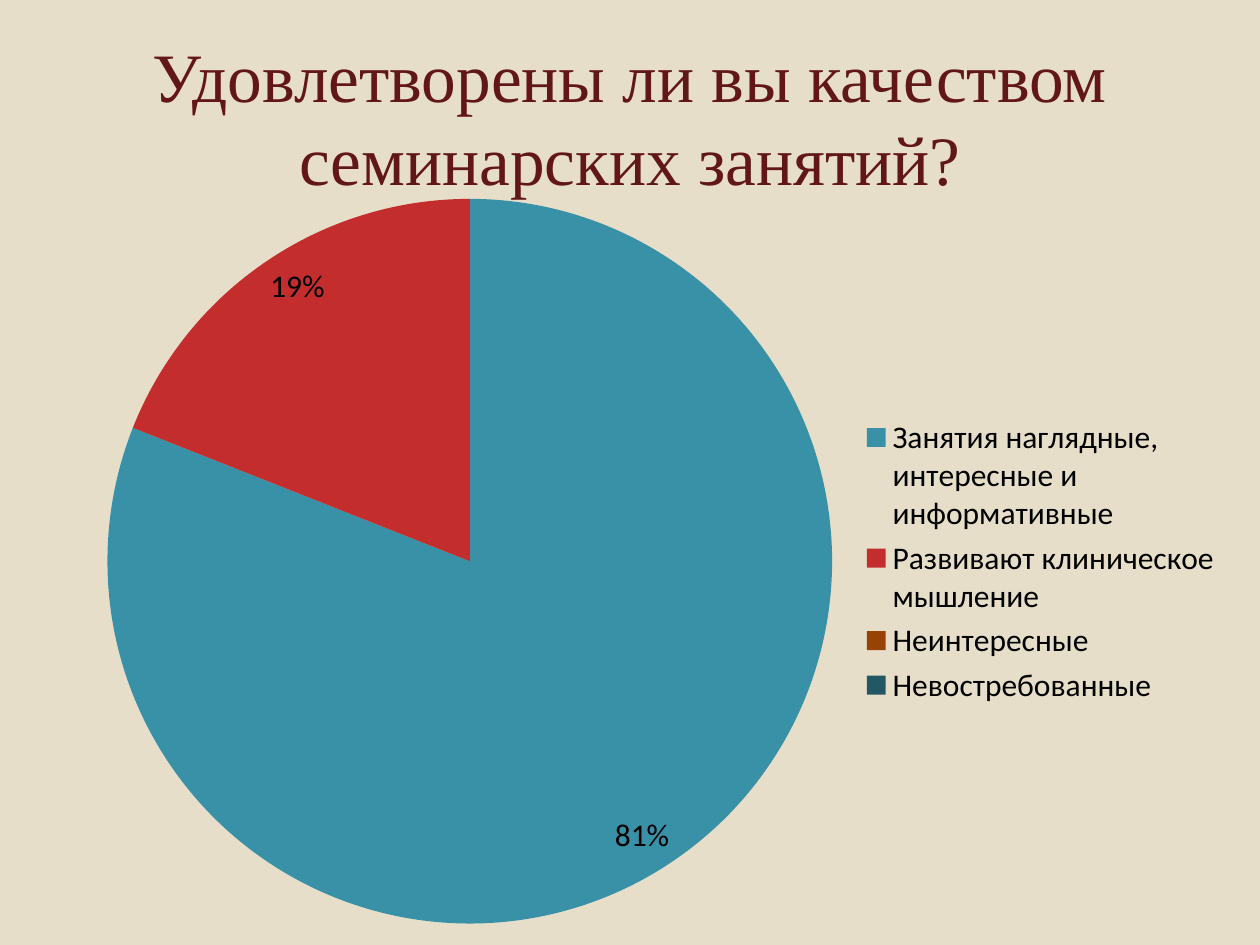
"""Builds a survey slide: a question above a pie chart of the answers."""
from lxml.etree import SubElement
from pptx import Presentation
from pptx.chart.data import CategoryChartData
from pptx.dml.color import RGBColor
from pptx.enum.chart import XL_CHART_TYPE, XL_LABEL_POSITION, XL_LEGEND_POSITION
from pptx.enum.text import MSO_ANCHOR, PP_ALIGN
from pptx.oxml.ns import qn
from pptx.util import Inches, Pt

BACKGROUND = RGBColor(0xE7, 0xDE, 0xC9)
MAROON = RGBColor(0x62, 0x17, 0x17)
BLACK = RGBColor(0, 0, 0)
TEAL = RGBColor(0x38, 0x91, 0xA7)
RED = RGBColor(0xC3, 0x2D, 0x2E)
BROWN = RGBColor(0x96, 0x43, 0x05)
DARK_TEAL = RGBColor(0x22, 0x57, 0x64)

QUESTION = "Удовлетворены ли вы качеством семинарских занятий?"
ANSWERS = [
    ("Занятия наглядные, интересные и информативные", 81, TEAL),
    ("Развивают клиническое мышление", 19, RED),
    ("Неинтересные", 0, BROWN),
    ("Невостребованные", 0, DARK_TEAL),
]
TITLE_BOX = (0.5, 0.3, 9, 1.25)
CHART_BOX = (0.67, 1.44, 9.13, 6.03)
PIE_AREA = {"x": 0.02, "y": 0.02, "w": 0.63, "h": 0.96}
TITLE_FONT = {"name": "Times New Roman", "size": Pt(39.6)}
CHART_FONT = {"name": "Calibri", "size": Pt(18)}


def set_font(font, values, color):
    for name, value in values.items():
        setattr(font, name, value)
    font.color.rgb = color


def add_title(slide):
    tf = slide.shapes.add_textbox(*map(Inches, TITLE_BOX)).text_frame
    tf.word_wrap = True
    tf.vertical_anchor = MSO_ANCHOR.MIDDLE
    p = tf.paragraphs[0]
    p.alignment = PP_ALIGN.CENTER
    r = p.add_run()
    r.text = QUESTION
    set_font(r.font, TITLE_FONT, MAROON)


def place_plot(plot_area, area):
    layout = plot_area.find(qn("c:layout"))
    if layout is None:
        layout = SubElement(plot_area, qn("c:layout"))
        plot_area.insert(0, layout)
    manual = SubElement(layout, qn("c:manualLayout"))
    settings = {"layoutTarget": "inner", "xMode": "edge", "yMode": "edge", **area}
    for tag, value in settings.items():
        SubElement(manual, qn(f"c:{tag}")).set("val", str(value))


def add_pie(slide):
    names, values, colors = zip(*ANSWERS)
    data = CategoryChartData()
    data.categories = names
    data.add_series("Series 1", values)
    chart = slide.shapes.add_chart(
        XL_CHART_TYPE.PIE, *map(Inches, CHART_BOX), data).chart
    chart.has_title = False
    set_font(chart.font, CHART_FONT, BLACK)
    chart.has_legend = True
    chart.legend.position = XL_LEGEND_POSITION.RIGHT
    chart.legend.include_in_layout = False
    set_font(chart.legend.font, CHART_FONT, BLACK)

    plot = chart.plots[0]
    plot.vary_by_categories = True
    for i, color in enumerate(colors):
        fill = plot.series[0].points[i].format.fill
        fill.solid()
        fill.fore_color.rgb = color
    plot.has_data_labels = True
    labels = plot.data_labels
    label_format = {
        "show_percentage": True, "show_value": False,
        "number_format": "0%;;", "number_format_is_linked": False,
        "position": XL_LABEL_POSITION.INSIDE_END,
    }
    for name, value in label_format.items():
        setattr(labels, name, value)
    set_font(labels.font, CHART_FONT, BLACK)
    place_plot(chart.element.find(".//" + qn("c:plotArea")), PIE_AREA)


def main():
    prs = Presentation()
    prs.slide_width, prs.slide_height = Inches(10), Inches(7.5)
    slide = prs.slides.add_slide(prs.slide_layouts[6])
    slide.background.fill.solid()
    slide.background.fill.fore_color.rgb = BACKGROUND
    add_title(slide)
    add_pie(slide)
    prs.save("out.pptx")


if __name__ == "__main__":
    main()
